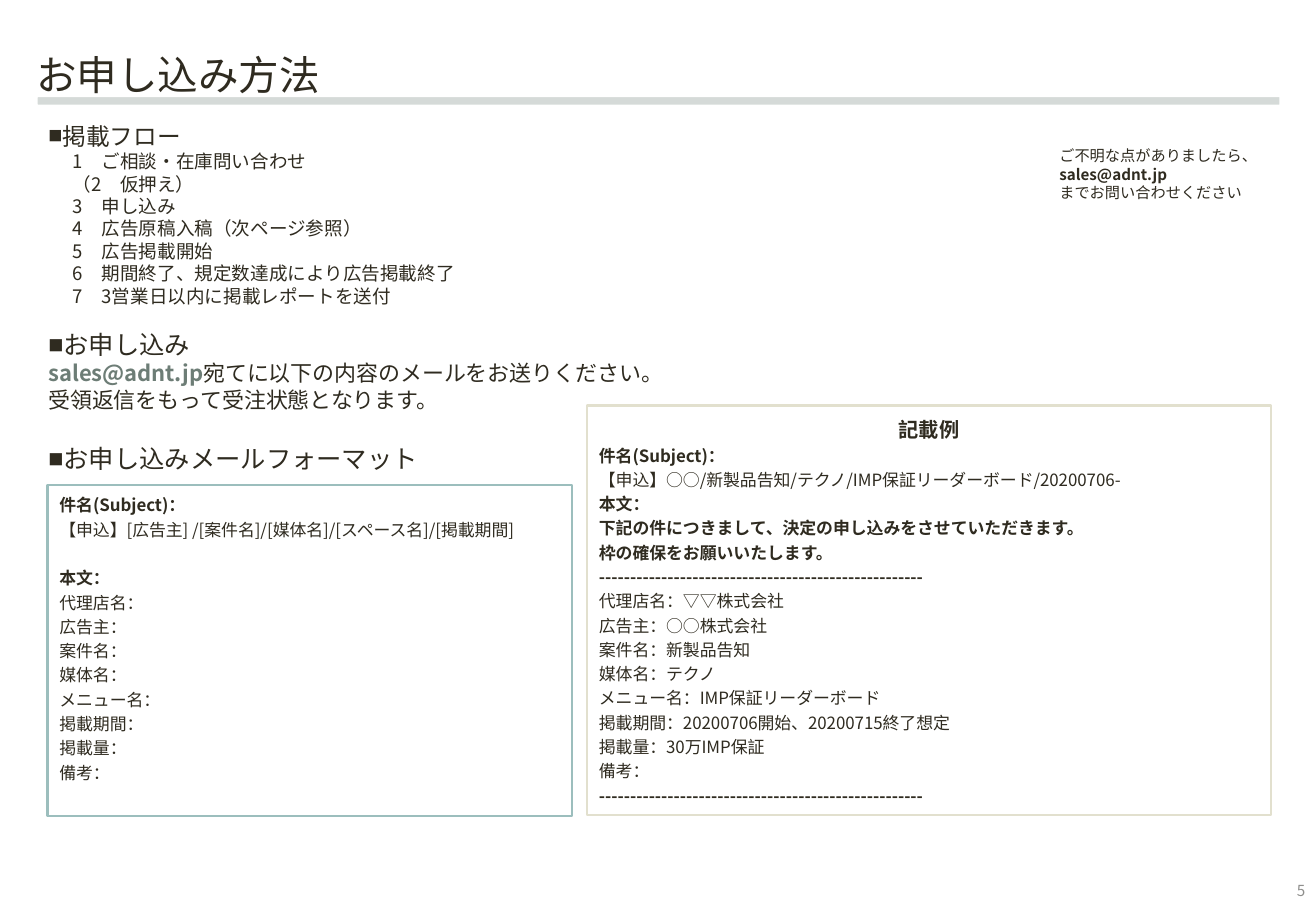
import pptx
import pptx.util
import pptx.dml.color
import pptx.enum.shapes
import pptx.enum.text
import pptx.oxml.ns
from lxml import etree

Pt = pptx.util.Pt
Color = pptx.dml.color.RGBColor
Shape = pptx.enum.shapes.MSO_SHAPE
Align = pptx.enum.text.PP_ALIGN
Anchor = pptx.enum.text.MSO_ANCHOR
qn = pptx.oxml.ns.qn

FONT = "Noto Sans CJK JP"
INK = Color(0x2F, 0x2B, 0x20)
GRAY = Color(0x8F, 0x8F, 0x8D)
BAR = Color(0xD5, 0xDA, 0xD8)
WHITE = Color(0xFF, 0xFF, 0xFF)
GREEN = Color(0x6D, 0x7D, 0x76)
TEAL = Color(0x9C, 0xBE, 0xBD)
SAND = Color(0xE2, 0xE0, 0xCE)

MAIL = "sales@adnt.jp"
DASHES = "-" * 52
STEPS = ["1　ご相談・在庫問い合わせ", "（2　仮押え）", "3　申し込み",
         "4　広告原稿入稿（次ページ参照）", "5　広告掲載開始",
         "6　期間終了、規定数達成により広告掲載終了",
         "7　3営業日以内に掲載レポートを送付"]
FIELDS = ["代理店名：", "広告主：", "案件名：", "媒体名：",
          "メニュー名：", "掲載期間：", "掲載量：", "備考："]
VALUES = ["▽▽株式会社", "○○株式会社", "新製品告知", "テクノ",
          "IMP保証リーダーボード", "20200706開始、20200715終了想定",
          "30万IMP保証", ""]


def set_frame(shape, anchor=Anchor.TOP):
    frame = shape.text_frame
    frame.word_wrap = True
    frame.vertical_anchor = anchor
    return frame


def add_text(slide, box, anchor=Anchor.TOP):
    return set_frame(slide.shapes.add_textbox(*map(Pt, box)), anchor)


def add_box(slide, kind, box, fill, line=None):
    shape = slide.shapes.add_shape(kind, *map(Pt, box))
    shape.shadow.inherit = False
    shape.fill.solid()
    shape.fill.fore_color.rgb = fill
    if line is None:
        shape.line.fill.background()
    else:
        shape.line.color.rgb = line
        shape.line.width = Pt(1.5)
    return shape


def add_para(frame, pitch, before=0, align=Align.LEFT):
    """Start a paragraph, reusing the empty first one."""
    para = frame.paragraphs[0]
    if para.runs:
        para = frame.add_paragraph()
    para.alignment = align
    para.line_spacing = Pt(pitch)
    para.space_before = Pt(before)
    return para


def add_run(para, text, size, bold=False, color=INK):
    run = para.add_run()
    run.text = text
    font = run.font
    font.size = Pt(size)
    font.bold = bold
    font.color.rgb = color
    font.name = FONT
    props = run._r.get_or_add_rPr()
    etree.SubElement(props, qn("a:ea"), typeface=FONT)


def add_head(frame, text, size, pitch, before=0):
    """Add a heading with a small square bullet."""
    para = add_para(frame, pitch, before)
    props = para._p.get_or_add_pPr()
    props.set("marL", "0")
    props.set("indent", "0")
    etree.SubElement(props, qn("a:buSzPct"), val="60000")
    etree.SubElement(props, qn("a:buFont"), typeface=FONT)
    etree.SubElement(props, qn("a:buChar"), char="■")
    add_run(para, text, size)


def draw_title(slide, box):
    left, top, width, height = box
    add_box(slide, Shape.ROUNDED_RECTANGLE,
            (left + 7.2, top + 33, width, 6), BAR, WHITE)
    frame = add_text(slide, box, Anchor.BOTTOM)
    add_run(add_para(frame, 28.8), "お申し込み方法", 24)


def draw_flow(slide, box):
    frame = add_text(slide, box)
    add_head(frame, "掲載フロー", 14, 17.7)
    for step in STEPS:
        para = add_para(frame, 13.3)
        para._p.get_or_add_pPr().set("marL", str(Pt(14.4)))
        add_run(para, step, 11)
    add_head(frame, "お申し込み", 15, 18, 13.2)
    para = add_para(frame, 15.8)
    add_run(para, MAIL, 13, True, GREEN)
    add_run(para, "宛てに以下の内容のメールをお送りください。", 13)
    add_run(add_para(frame, 15.8), "受領返信をもって受注状態となります。", 13)
    add_head(frame, "お申し込みメールフォーマット", 15, 18, 18.2)


def draw_panel(slide, box, line, rows, title=None):
    """Draw a mail panel; each row is text, bold, space before."""
    frame = set_frame(add_box(slide, Shape.RECTANGLE, box, WHITE, line))
    if title:
        add_run(add_para(frame, 17.5, align=Align.CENTER), title, 12, True)
    for text, bold, before in rows:
        add_run(add_para(frame, 14.4, before), text, 10, bold)


def draw_note(slide, box):
    frame = set_frame(add_box(slide, Shape.RECTANGLE, box, WHITE))
    for text in ("ご不明な点がありましたら、", MAIL, "までお問い合わせください"):
        add_run(add_para(frame, 10.7), text, 9, text == MAIL)


def draw_page(slide, box):
    frame = add_text(slide, box, Anchor.MIDDLE)
    add_run(add_para(frame, 10.7, align=Align.RIGHT), "5", 9, color=GRAY)


def main():
    deck = pptx.Presentation()
    deck.slide_width, deck.slide_height = Pt(779.76), Pt(540)
    slide = deck.slides.add_slide(deck.slide_layouts[6])
    draw_title(slide, (14.4, 23.8, 737.3, 38.2))
    draw_flow(slide, (21.6, 67.7, 739.4, 442))
    subject = ("件名(Subject)：", True, 0)
    form = [subject,
            ("【申込】[広告主] /[案件名]/[媒体名]/[スペース名]/[掲載期間]", False, 0),
            ("本文：", True, 14.4)]
    form += [(field, False, 0) for field in FIELDS]
    draw_panel(slide, (28.1, 287.5, 311, 196.3), TEAL, form)
    sample = [subject,
              ("【申込】○○/新製品告知/テクノ/IMP保証リーダーボード/20200706-", False, 0),
              ("本文：", True, 0),
              ("下記の件につきまして、決定の申し込みをさせていただきます。", True, 0),
              ("枠の確保をお願いいたします。", True, 0),
              (DASHES, True, 0)]
    sample += [(field + value, False, 0)
               for field, value in zip(FIELDS, VALUES)]
    sample.append((DASHES, True, 0))
    draw_panel(slide, (347.8, 240.5, 405.4, 242.6), SAND, sample, "記載例")
    draw_note(slide, (620.6, 83.6, 140.4, 39.6))
    draw_page(slide, (718.6, 519.8, 61.9, 16.6))
    deck.save("out.pptx")


if __name__ == "__main__":
    main()
